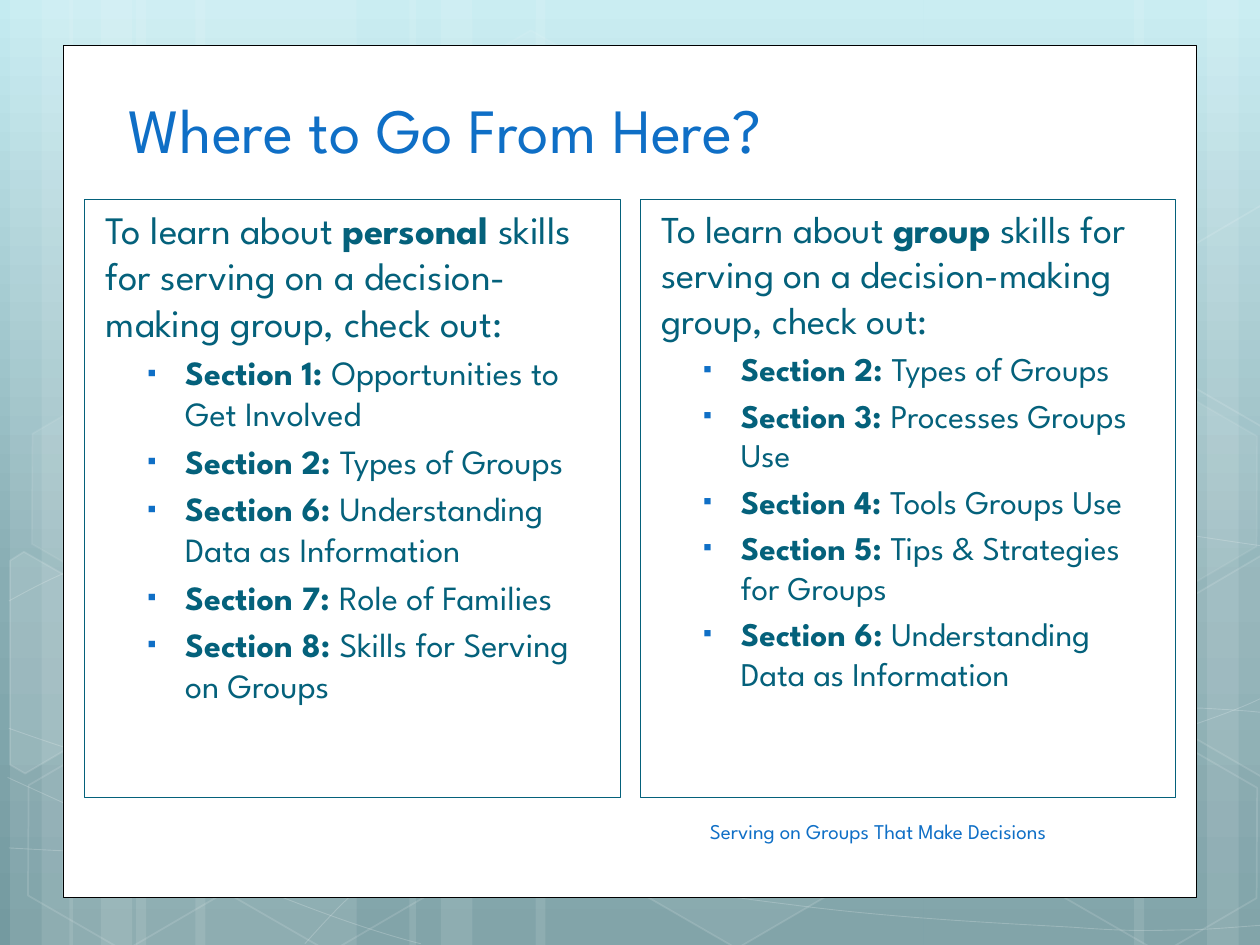
"""Build the "Where to Go From Here?" slide with two outlined reading lists."""
import copy

import lxml.etree
import pptx
import pptx.dml.color
import pptx.enum.shapes
import pptx.enum.text
import pptx.oxml.ns
import pptx.util

FONT, BLUE, TEAL, WHITE = "League Spartan", "0F6FC6", "04617B", "FFFFFF"
inch, qn = pptx.util.Inches, pptx.oxml.ns.qn
SHAPE, ANCHOR = pptx.enum.shapes.MSO_SHAPE, pptx.enum.text.MSO_ANCHOR


def paint(target, colour, share=100):
    """Give a fill a solid colour at a percentage of opacity."""
    target.solid()
    target.fore_color.rgb = pptx.dml.color.RGBColor.from_string(colour)
    if share < 100:
        solid = target._xPr.find(qn("a:solidFill"))
        lxml.etree.SubElement(solid[0], qn("a:alpha"), val=str(share * 1000))


def style(shape, fill, line, width=1):
    """Set fill and line, each None or a (colour, opacity) pair."""
    shape.shadow.inherit = False
    for target, look in ((shape.fill, fill), (shape.line.fill, line)):
        if look:
            paint(target, *look)
        else:
            target.background()
    if line:
        shape.line.width = pptx.util.Pt(width)


deck = pptx.Presentation()
deck.slide_width, deck.slide_height = inch(10), inch(7.5)
page = deck.slides.add_slide(deck.slide_layouts[3])
shapes = page.shapes

backdrop = page.background.fill
backdrop.gradient()
backdrop.gradient_angle = 270
stop_list = next(page._element.iter(qn("a:gsLst")))
stop_list.insert(1, copy.deepcopy(stop_list[0]))
for stop, (position, colour) in zip(
        backdrop.gradient_stops, [(0, "C4EBF1"), (0.62, "88ADB3"), (1, "749AA0")]):
    stop.position = position
    stop.color.rgb = pptx.dml.color.RGBColor.from_string(colour)

stripes = [(1.08, 1.75, 0), (0.08, 0.5, 0), (0.33, 0.83, 0), (1.55, 1.75, 0), (0.55, 0.5, 0),
           (0.8, 0.83, 0), (7.33, 1.75, 180), (9.58, 0.5, 180), (9, 0.83, 180),
           (4.25, 3.08, 0), (3.25, 0.5, 0), (3.5, 0.83, 0)]
for left, width, turn in stripes:
    stripe = shapes.add_shape(SHAPE.RECTANGLE, inch(left), 0, inch(width), deck.slide_height)
    stripe.rotation = turn
    style(stripe, (WHITE, 10), None)

curves = [
    [(0.07, 6.73), (0.61, 6.76), (1.15, 6.79), (1.9, 6.78), (2.65, 6.77), (3.58, 6.75),
     (4.58, 6.65), (5.58, 6.55), (7, 6.36), (7.92, 6.17), (8.83, 5.98), (9.77, 5.68),
     (10.07, 5.51)],
    [(0.07, 4.77), (0.36, 4.61), (0.65, 4.46), (1.21, 4.31), (1.78, 4.16), (2.59, 3.94),
     (3.47, 3.87), (4.36, 3.8), (5.44, 3.79), (6.54, 3.87), (7.64, 3.95), (9.47, 4.26),
     (10.07, 4.34)],
    [(0.06, 6.17), (1.27, 6.72), (2.47, 7.27), (3.34, 7.49)],
    [(0.07, 5.78), (0.38, 5.89), (0.7, 6), (1.28, 6.16), (1.86, 6.31), (2.73, 6.56),
     (3.57, 6.73), (4.4, 6.9), (5.45, 7.08), (6.28, 7.18), (7.11, 7.29), (8, 7.33),
     (8.53, 7.36), (9.05, 7.4), (9.19, 7.38), (9.45, 7.38), (9.71, 7.37), (9.89, 7.35),
     (10.07, 7.34)],
    [(2.42, 7.49), (2.6, 7.29), (2.78, 7.09), (3.02, 6.91), (3.26, 6.73), (3.6, 6.53),
     (3.88, 6.39), (4.16, 6.25), (4.33, 6.19), (4.7, 6.09), (5.06, 5.99), (5.73, 5.85),
     (6.08, 5.78), (6.44, 5.71), (6.49, 5.71), (6.8, 5.69), (7.11, 5.66), (7.6, 5.63),
     (7.94, 5.62), (8.29, 5.61), (8.86, 5.62), (8.86, 5.62), (9.08, 5.62), (9.31, 5.62),
     (9.53, 5.62), (9.71, 5.63), (9.88, 5.64), (9.97, 5.65), (10.06, 5.66), (10.03, 5.65),
     (10.06, 5.66)],
]
for knots in curves:
    points = [tuple(map(inch, knot)) for knot in knots]
    builder = shapes.build_freeform(*points[0])
    builder.add_line_segments(points[1:], close=False)
    curve = builder.convert_to_shape()
    style(curve, None, (WHITE, 20), 0.5)
    segments = list(curve._element.iter(qn("a:lnTo")))
    outline = segments[0].getparent()
    for start in range(0, len(segments), 3):
        bend = lxml.etree.SubElement(outline, qn("a:cubicBezTo"))
        for segment in segments[start:start + 3]:
            bend.append(segment[0])
            outline.remove(segment)

hexagons = [(3.34, 0.36, 4, 8), (4.97, 5.89, 6, 12), (0.11, 5.91, 0, 12), (0.14, 3.12, 7, 8),
            (1.74, 5.92, 0, 12), (8.34, 5.93, 0, 12), (8.34, 3.14, 7, 8)]
for left, top, fill, line in hexagons:
    hexagon = shapes.add_shape(SHAPE.HEXAGON, inch(left), inch(top), inch(1.75), inch(1.52))
    hexagon.adjustments[0] = 0.285
    hexagon.rotation = 30
    style(hexagon, (WHITE, fill) if fill else None, (WHITE, line))

cut_hexagons = [
    (10, [(0.08, 4.45), (0.19, 4.38), (0.96, 4.82), (0.95, 5.7), (0.2, 6.14), (0.08, 6.07)]),
    (4, [(9.26, 4.85), (10.01, 4.41), (10.09, 4.46), (10.09, 6.13), (10.02, 6.17), (9.26, 5.73)]),
    (0, [(9.26, 2.07), (10.01, 1.63), (10.1, 1.68), (10.09, 3.35), (10.02, 3.39), (9.26, 2.95)]),
]
for fill, corners in cut_hexagons:
    points = [tuple(map(inch, corner)) for corner in corners]
    builder = shapes.build_freeform(*points[0])
    builder.add_line_segments(points[1:])
    style(builder.convert_to_shape(), (WHITE, fill) if fill else None, (WHITE, 12))

panel = shapes.add_shape(SHAPE.RECTANGLE, inch(0.5), inch(0.36), inch(9), inch(6.76))
style(panel, (WHITE,), ("000000",), 0.5)

title, *bodies = page.placeholders
for holder in (title, *bodies):
    shapes._spTree.append(holder._element)
title.left, title.top, title.width, title.height = map(inch, (0.92, 0.66, 7.9, 0.71))
title.text_frame.text = "Where to Go From Here?"
title.text_frame.vertical_anchor = ANCHOR.BOTTOM
heading = title.text_frame.paragraphs[0]
heading.alignment = pptx.enum.text.PP_ALIGN.LEFT

columns = [
    (0.67, 22.2, 19.4, "personal",
     [(1, "Opportunities to Get Involved"), (2, "Types of Groups"),
      (6, "Understanding Data as Information"), (7, "Role of Families"),
      (8, "Skills for Serving on Groups")]),
    (5.08, 21.7, 18.9, "group",
     [(2, "Types of Groups"), (3, "Processes Groups Use"), (4, "Tools Groups Use"),
      (5, "Tips & Strategies for Groups"), (6, "Understanding Data as Information")]),
]
fonts = [(heading, 36, BLUE)]
for body, (left, lead_size, item_size, topic, sections) in zip(bodies, columns):
    body.left, body.top, body.width, body.height = map(inch, (left, 1.58, 4.25, 4.75))
    paint(body.line.fill, TEAL)
    body.line.width = pptx.util.Pt(0.25)
    frame = body.text_frame
    lines = [("To learn about ", topic, " skills for serving on a decision-making group, check out:")]
    lines += [("", f"Section {number}: ", name) for number, name in sections]
    for index, (before, strong, after) in enumerate(lines):
        para = frame.add_paragraph() if index else frame.paragraphs[0]
        for words in filter(None, (before, strong, after)):
            span = para.add_run()
            span.text = words
            if words == strong:
                span.font.bold = True
        props = para._p.get_or_add_pPr()
        if index:
            para.level = 1
            margin, indent = 0.7, -0.3
            colour = lxml.etree.SubElement(props, qn("a:buClr"))
            lxml.etree.SubElement(colour, qn("a:srgbClr"), val=BLUE)
            lxml.etree.SubElement(props, qn("a:buSzPct"), val="76000")
            lxml.etree.SubElement(props, qn("a:buChar"), char="▪")
        else:
            margin, indent = 0.07, 0
            para.space_before = pptx.util.Pt(0)
            lxml.etree.SubElement(props, qn("a:buNone"))
        props.set("marL", str(inch(margin)))
        props.set("indent", str(inch(indent)))
        fonts.append((para, item_size if index else lead_size, TEAL))

footer = shapes.add_textbox(inch(5.03), inch(6.4), inch(3.88), inch(0.4)).text_frame
footer.word_wrap = True
footer.vertical_anchor = ANCHOR.MIDDLE
footer.text = "Serving on Groups That Make Decisions"
footer.paragraphs[0].alignment = pptx.enum.text.PP_ALIGN.CENTER
fonts.append((footer.paragraphs[0], 12, BLUE))

for para, size, colour in fonts:
    para.font.name, para.font.size = FONT, pptx.util.Pt(size)
    paint(para.font.fill, colour)

deck.save("out.pptx")
